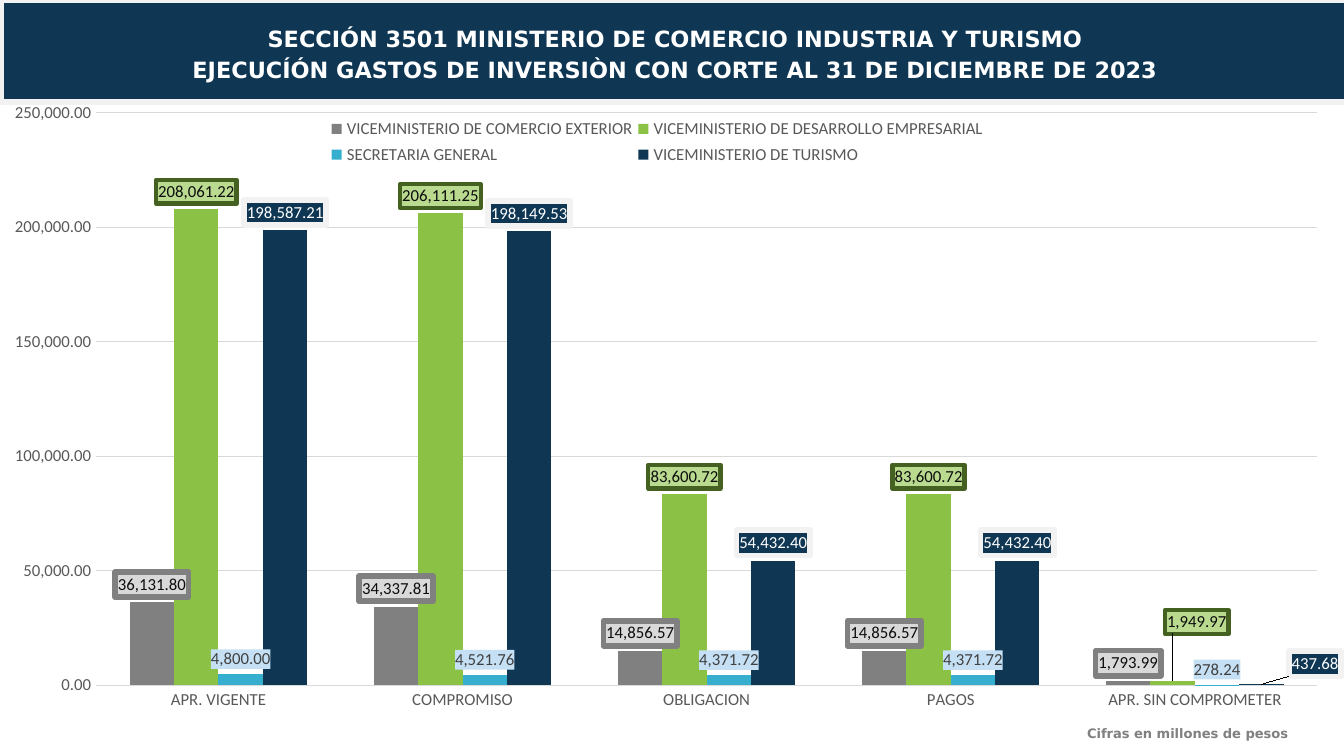
from copy import deepcopy

from lxml import etree
from pptx import Presentation
from pptx.chart.data import CategoryChartData
from pptx.dml.color import RGBColor
from pptx.enum.chart import XL_CHART_TYPE, XL_LABEL_POSITION, XL_LEGEND_POSITION, XL_TICK_MARK
from pptx.enum.text import MSO_ANCHOR, PP_ALIGN
from pptx.oxml import parse_xml
from pptx.oxml.ns import nsdecls, qn
from pptx.util import Inches, Pt

COLUMNS = XL_CHART_TYPE.COLUMN_CLUSTERED
OUTSIDE_END = XL_LABEL_POSITION.OUTSIDE_END
LEGEND_TOP = XL_LEGEND_POSITION.TOP
NO_TICK = XL_TICK_MARK.NONE
LEFT, CENTER = PP_ALIGN.LEFT, PP_ALIGN.CENTER
MIDDLE = MSO_ANCHOR.MIDDLE

TITLE = [
    "SECCIÓN 3501 MINISTERIO DE COMERCIO INDUSTRIA Y TURISMO",
    "EJECUCÍÓN GASTOS DE INVERSIÒN CON CORTE AL 31 DE DICIEMBRE DE 2023",
]
UNITS = ["Cifras en millones de pesos"]
STAGES = ["APR. VIGENTE", "COMPROMISO", "OBLIGACION", "PAGOS", "APR. SIN COMPROMETER"]
SERIES = [
    dict(name="VICEMINISTERIO DE COMERCIO EXTERIOR",
         values=[36131.80, 34337.81, 14856.57, 14856.57, 1793.99],
         color="808080", text="0D0D0D", fill="D9D9D9", border="808080", width=3),
    dict(name="VICEMINISTERIO DE DESARROLLO EMPRESARIAL",
         values=[208061.22, 206111.25, 83600.72, 83600.72, 1949.97],
         color="8BC145", text="0D0D0D", fill="B9DA8F", border="456122", width=2.25,
         moved={4: (0.18, -0.31)}),
    dict(name="SECRETARIA GENERAL",
         values=[4800.00, 4521.76, 4371.72, 4371.72, 278.24],
         color="36AFCE", text="404040", fill="C5E0F4"),
    dict(name="VICEMINISTERIO DE TURISMO",
         values=[198587.21, 198149.53, 54432.40, 54432.40, 437.68],
         color="0F3754", text="FFFFFF", fill="0F3754", border="F2F2F2", width=3,
         moved={4: (0.4, -0.02)}),
]
THEME = dict(
    navy="0F3754", white="FFFFFF", pale="F2F2F2", grey="808080", axis="595959", grid="D9D9D9",
    head_font="DejaVu Sans", chart_font="Calibri", title=12, note=7, chart=9,
)
NUMBER = "#,##0.00"
CHART_W, CHART_H = 9.99, 4.86
PLOT_BOX = (0.71, 0.08, 9.11, 4.26)
LEGEND_BOX = (2.42, 0.08, 4.95, 0.43)
NO_LEADERS = (
    f'<c:extLst {nsdecls("c")}><c:ext uri="{{CE6537A1-D6FC-4f65-9D91-7224C49458BB}}" '
    'xmlns:c15="http://schemas.microsoft.com/office/drawing/2012/chart">'
    '<c15:showLeaderLines val="0"/></c:ext></c:extLst>')


def rgb(value):
    return RGBColor.from_string(value)


def set_font(font, size, color, name, bold=False):
    font.size, font.name, font.bold = Pt(size), name, bold
    font.color.rgb = rgb(color)


def write(tf, lines, size, color, align=LEFT, before=0, anchor=None, inset=None):
    tf.word_wrap = True
    if anchor is not None:
        tf.vertical_anchor = anchor
    if inset is not None:
        tf.margin_left = tf.margin_right = tf.margin_top = tf.margin_bottom = Inches(inset)
    for i, line in enumerate(lines):
        p = tf.paragraphs[0] if i == 0 else tf.add_paragraph()
        p.alignment, p.line_spacing, p.space_before = align, 0.9, Pt(before)
        r = p.add_run()
        r.text = line
        set_font(r.font, size, color, THEME["head_font"], True)


def layout(x, y, w=None, h=None, inner=False):
    node = etree.Element(qn("c:layout"))
    manual = etree.SubElement(node, qn("c:manualLayout"))
    items = [("layoutTarget", "inner")] if inner else []
    if w is not None:
        items += [("xMode", "edge"), ("yMode", "edge")]
    items += [("x", x / CHART_W), ("y", y / CHART_H)]
    if w is not None:
        items += [("w", w / CHART_W), ("h", h / CHART_H)]
    for tag, value in items:
        etree.SubElement(manual, qn("c:" + tag)).set("val", str(value))
    return node


def label_box(fill, border=None, width=0):
    line = "<a:noFill/>"
    if border:
        line = f'<a:solidFill><a:srgbClr val="{border}"/></a:solidFill><a:round/>'
    return parse_xml(
        f'<c:spPr {nsdecls("c", "a")}><a:solidFill><a:srgbClr val="{fill}"/></a:solidFill>'
        f'<a:ln w="{int(Pt(width))}">{line}</a:ln></c:spPr>')


def style_series(ser, item):
    ser.format.fill.solid()
    ser.format.fill.fore_color.rgb = rgb(item["color"])
    ser.invert_if_negative = False
    labels = ser.data_labels
    labels.show_value = True
    labels.position = OUTSIDE_END
    labels.number_format, labels.number_format_is_linked = NUMBER, False
    set_font(labels.font, THEME["chart"], item["text"], THEME["chart_font"])
    root = labels._element
    box = label_box(item["fill"], item.get("border"), item.get("width", 0))
    root.find(qn("c:txPr")).addprevious(box)
    shared = [root.find(qn(tag)) for tag in ("c:numFmt", "c:spPr", "c:txPr")]
    for index, offset in item.get("moved", {}).items():
        ser.points[index].data_label.position = OUTSIDE_END
        label = next(d for d in root.findall(qn("c:dLbl"))
                     if d.find(qn("c:idx")).get("val") == str(index))
        for tag in ("c:numFmt", "c:spPr", "c:txPr"):
            for old in label.findall(qn(tag)):
                label.remove(old)
        anchor = label.find(qn("c:idx"))
        for node in [layout(*offset)] + [deepcopy(part) for part in shared]:
            anchor.addnext(node)
            anchor = node
    root.append(parse_xml(NO_LEADERS))


def add_spending_chart(s):
    data = CategoryChartData(number_format=NUMBER)
    data.categories = STAGES
    for item in SERIES:
        data.add_series(item["name"], item["values"])
    chart = s.shapes.add_chart(
        COLUMNS, Inches(0.01), Inches(0.76), Inches(CHART_W), Inches(CHART_H), data).chart
    set_font(chart.font, THEME["chart"], THEME["axis"], THEME["chart_font"])
    chart.has_title = False
    chart.has_legend = True
    chart.legend.position = LEGEND_TOP
    chart.legend.include_in_layout = False
    set_font(chart.legend.font, THEME["chart"], THEME["axis"], THEME["chart_font"])
    legend = chart.legend._element
    for old in legend.findall(qn("c:layout")):
        legend.remove(old)
    legend.find(qn("c:legendPos")).addnext(layout(*LEGEND_BOX))

    plot = chart.plots[0]
    plot.gap_width, plot.overlap, plot.vary_by_categories = 150, 0, False
    area = plot._element.getparent()
    for old in area.findall(qn("c:layout")):
        area.remove(old)
    area.insert(0, layout(*PLOT_BOX, inner=True))

    for axis in (chart.category_axis, chart.value_axis):
        axis.major_tick_mark = axis.minor_tick_mark = NO_TICK
        axis.format.line.fill.background()
        set_font(axis.tick_labels.font, THEME["chart"], THEME["axis"], THEME["chart_font"])
    values = chart.value_axis
    values.minimum_scale, values.maximum_scale, values.major_unit = 0, 250000, 50000
    values.tick_labels.number_format = NUMBER
    values.tick_labels.number_format_is_linked = False
    values.has_major_gridlines = True
    values.major_gridlines.format.line.color.rgb = rgb(THEME["grid"])
    values.major_gridlines.format.line.width = Pt(0.75)
    for ser, item in zip(plot.series, SERIES):
        style_series(ser, item)


def main():
    prs = Presentation()
    prs.slide_width = Inches(10)
    prs.slide_height = prs.slide_width * 9 // 16
    s = prs.slides.add_slide(prs.slide_layouts[5])

    sp = s.shapes.title
    sp.left, sp.top, sp.width, sp.height = Inches(0.01), Inches(0), Inches(10.03), Inches(0.76)
    sp.fill.solid()
    sp.fill.fore_color.rgb = rgb(THEME["navy"])
    sp.line.color.rgb = rgb(THEME["pale"])
    sp.line.width = Pt(3)
    write(sp.text_frame, TITLE, THEME["title"], THEME["white"], align=CENTER,
          before=3.6, anchor=MIDDLE, inset=0)
    sp.text_frame.margin_top = Inches(0.07)

    note = s.shapes.add_textbox(Inches(7.99), Inches(5.36), Inches(1.71), Inches(0.21))
    write(note.text_frame, UNITS, THEME["note"], THEME["grey"])

    add_spending_chart(s)
    prs.save("out.pptx")


if __name__ == "__main__":
    main()
